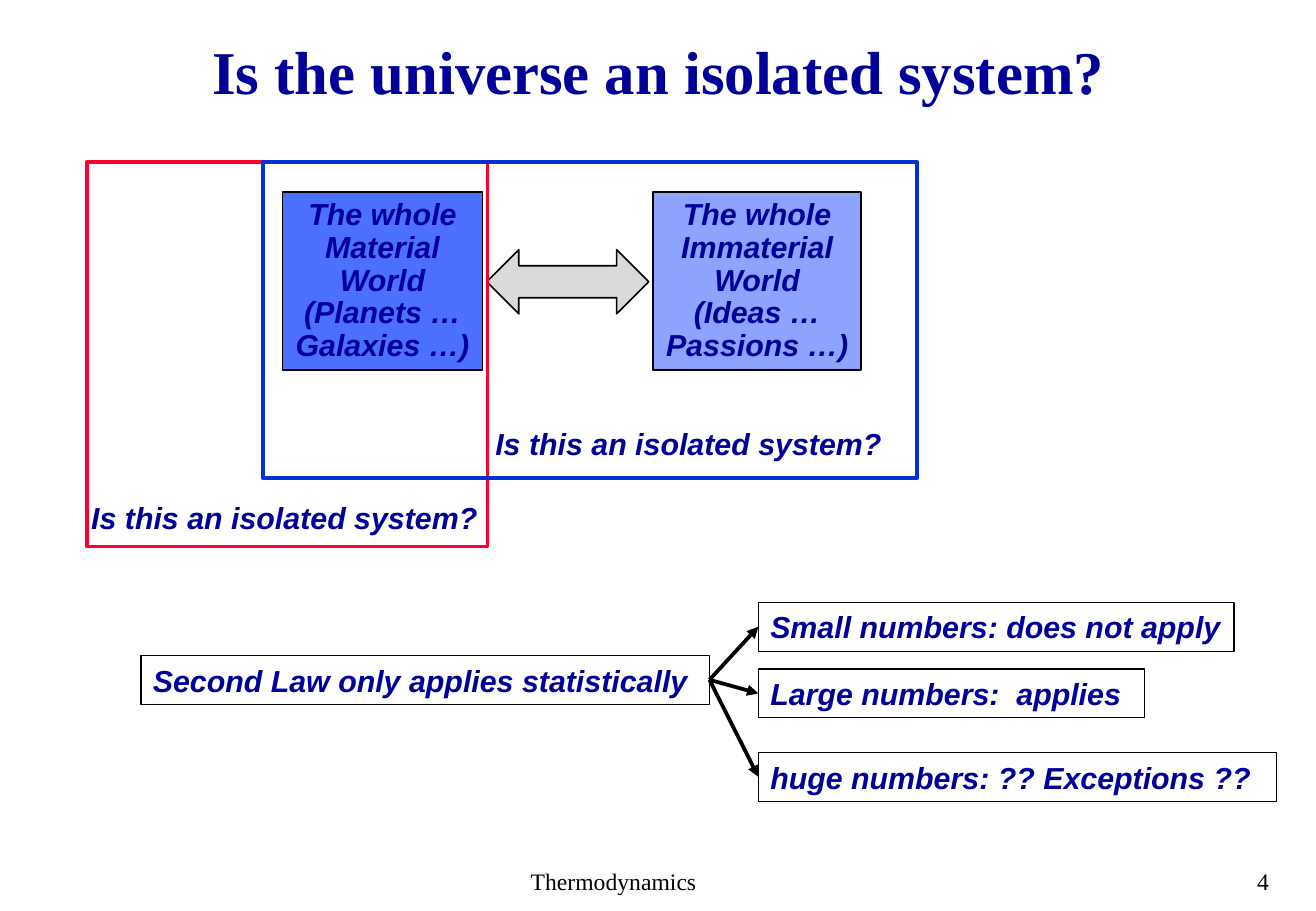
import pptx
import pptx.util
import pptx.dml.color
import pptx.enum.shapes
import pptx.enum.text
import pptx.oxml
import pptx.oxml.ns

Pt = pptx.util.Pt
SHAPE = pptx.enum.shapes.MSO_SHAPE
ALIGN = pptx.enum.text.PP_ALIGN
ANCHOR = pptx.enum.text.MSO_ANCHOR
NAVY, BLACK = "000099", "000000"
ASK = "Is this an isolated system?"


def paint(part, tone):
    """Give a fill, line or font one solid colour."""
    part.color.rgb = pptx.dml.color.RGBColor.from_string(tone)


def write(shape, text, size=18, face="Arial", tone=NAVY, bold=True,
          slant=True, align=ALIGN.LEFT, wrap=False, space=None):
    frame = shape.text_frame
    frame.text = text
    frame.word_wrap = wrap
    frame.auto_size = pptx.enum.text.MSO_AUTO_SIZE.NONE
    frame.vertical_anchor = ANCHOR.MIDDLE
    for para in frame.paragraphs:
        para.alignment = align
        para.line_spacing = space
        for run in para.runs:
            font = run.font
            font.size, font.name = Pt(size), face
            font.bold, font.italic = bold, slant
            paint(font, tone)


def label(slide, box, text, **style):
    note = slide.shapes.add_textbox(*map(Pt, box))
    write(note, text, **style)


def block(slide, box, fill=None, line=BLACK, width=1, kind=SHAPE.RECTANGLE):
    shape = slide.shapes.add_shape(kind, *map(Pt, box))
    shape.shadow.inherit = False
    if fill:
        shape.fill.solid()
        shape.fill.fore_color.rgb = pptx.dml.color.RGBColor.from_string(fill)
    else:
        shape.fill.background()
    paint(shape.line, line)
    shape.line.width = Pt(width)
    return shape


def arrow(slide, start, end):
    link = slide.shapes.add_connector(
        pptx.enum.shapes.MSO_CONNECTOR.STRAIGHT, *map(Pt, start + end))
    paint(link.line, BLACK)
    link.line.width = Pt(2.25)
    space = pptx.oxml.ns.nsdecls("a")
    line = link.line._get_or_add_ln()
    line.append(pptx.oxml.parse_xml(f'<a:tailEnd {space} type="triangle"/>'))
    line.addnext(pptx.oxml.parse_xml(f"<a:effectLst {space}/>"))


def title(slide, box):
    head = slide.shapes.title
    head.left, head.top, head.width, head.height = map(Pt, box)
    write(head, "Is the universe an isolated system?", size=36,
          face="Times New Roman", slant=False, align=ALIGN.CENTER, space=0.9)


def worlds(slide, box):
    left, top, width, height = box
    # Material and immaterial worlds
    for shift, wide, fill, text in (
            (116, 118.5, "4B71FD",
             "The whole\nMaterial\nWorld\n(Planets …\nGalaxies …)"),
            (335.5, 123.5, "8CA4FD",
             "The whole\nImmaterial\nWorld\n(Ideas …\nPassions …)")):
        world = block(slide, (left + shift, top + 18, wide, 105.5), fill)
        write(world, text, align=ALIGN.CENTER, space=0.9)
    block(slide, (left + 237, top + 52, 96, 38), "D9D9D9",
          kind=SHAPE.LEFT_RIGHT_ARROW)
    # Red frame and its question
    block(slide, (left, top, 237.5, height), line="FD012B", width=2.25)
    label(slide, (left - 4.5, top + 196, 246, 29), ASK)
    # Blue frame and its question
    block(slide, (left + 104.5, top, width - 104.5, 187.5),
          line="0330D8", width=2.25)
    label(slide, (left + 235, top + 152.5, 253, 29), ASK)


def cases(slide, box):
    left, top, width, height = box
    high = 29

    def item(x, y, wide, text):
        write(block(slide, (x, y, wide, high), width=0.75), text)

    # Law on the left
    law = top + 31.5
    item(left, law, 337, "Second Law only applies statistically")
    # Cases on the right, each with an arrow
    fork = (left + 337, law + high / 2)
    column = left + 366
    for drop, wide, text in (
            (0, 282, "Small numbers: does not apply"),
            (39.5, 229, "Large numbers:  applies"),
            (height - high, width - 366, "huge numbers: ?? Exceptions ??")):
        item(column, top + drop, wide, text)
        arrow(slide, fork, (column, top + drop + high / 2))


def footer(slide, box):
    left, top, width, height = box
    style = dict(size=14, face="Times New Roman", tone=BLACK,
                 bold=False, slant=False)
    label(slide, (left, top, 114, height), "Thermodynamics", **style)
    label(slide, (left + width - 31, top, 31, height), "4", **style)


def main():
    deck = pptx.Presentation()
    deck.slide_width, deck.slide_height = Pt(780), Pt(540)
    slide = deck.slides.add_slide(deck.slide_layouts[5])
    footer(slide, (307.5, 510, 461.5, 24.5))
    title(slide, (116, 21.5, 548.5, 46))
    worlds(slide, (51.5, 96, 492, 228))
    cases(slide, (83.5, 357, 673, 118))
    deck.save("out.pptx")


if __name__ == "__main__":
    main()
